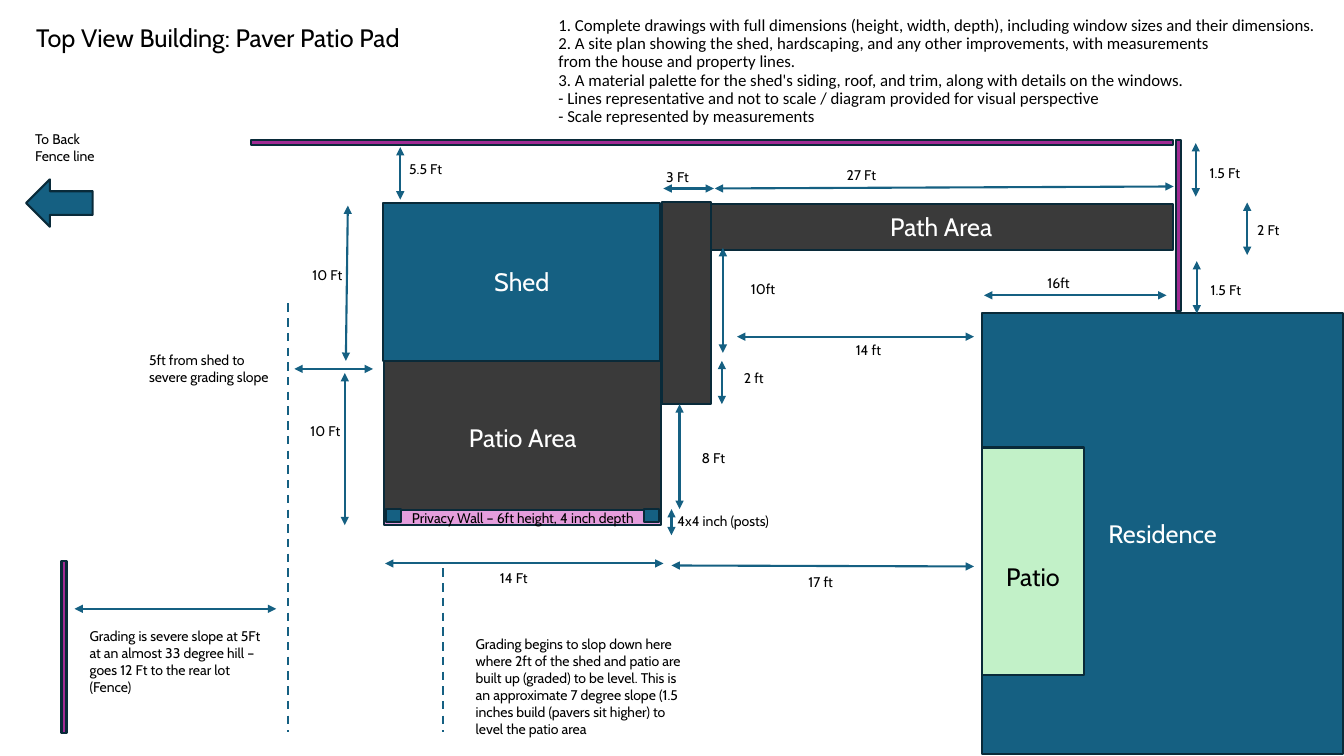
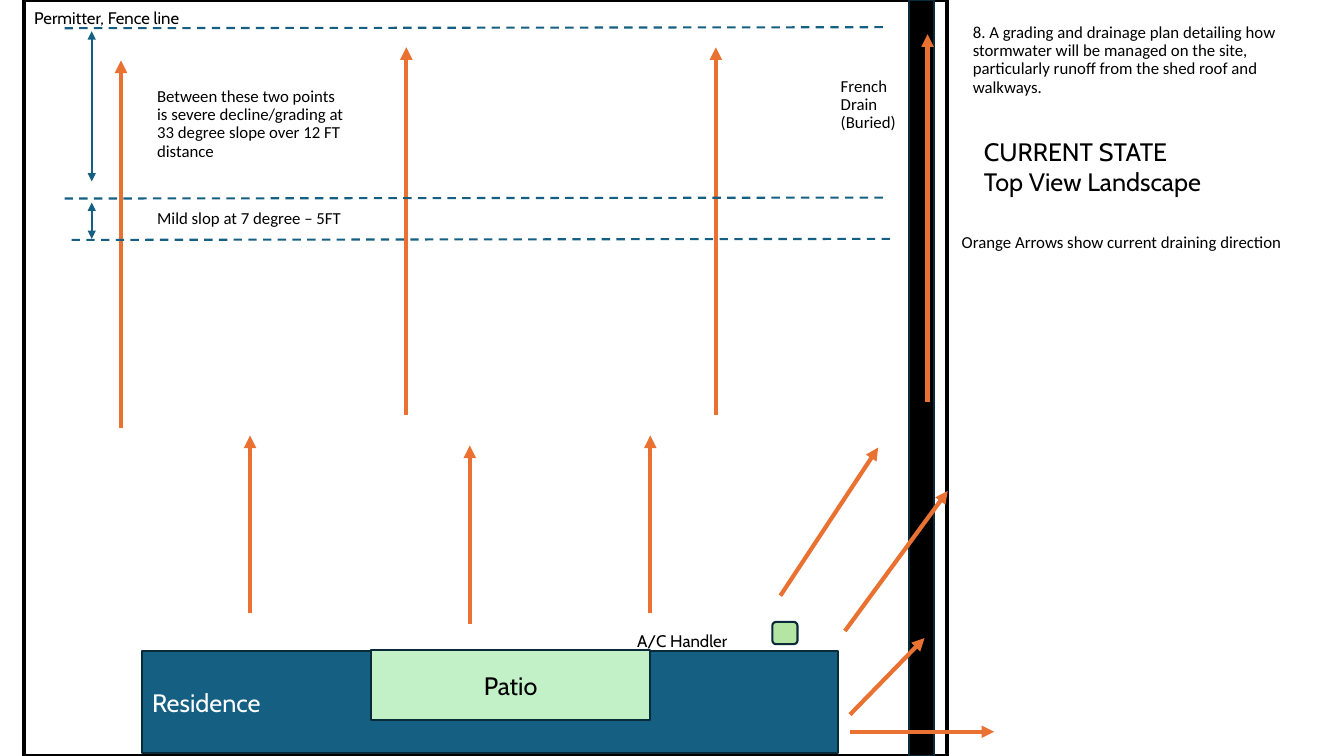
from lxml import etree
from pptx import Presentation
from pptx.dml.color import RGBColor
from pptx.enum.dml import MSO_LINE
from pptx.enum.shapes import MSO_CONNECTOR, MSO_SHAPE
from pptx.enum.text import MSO_ANCHOR, PP_ALIGN
from pptx.oxml.ns import qn
from pptx.util import Inches, Pt

RECT, ROUNDED, LEFT_ARROW = MSO_SHAPE.RECTANGLE, MSO_SHAPE.ROUNDED_RECTANGLE, MSO_SHAPE.LEFT_ARROW
STRAIGHT, DASH = MSO_CONNECTOR.STRAIGHT, MSO_LINE.DASH
TOP, MIDDLE = MSO_ANCHOR.TOP, MSO_ANCHOR.MIDDLE
LEFT, CENTER = PP_ALIGN.LEFT, PP_ALIGN.CENTER

BLUE, EDGE, PAVER, FENCE = "156082", "092A39", "3A3A3A", "A02B93"
MINT, GREEN, PINK, ORANGE = "C2F1C8", "B4E5A2", "E59EDD", "E97132"
BLACK, WHITE = "000000", "FFFFFF"
HEADING, CAPTION, LABEL, NOTE = ("Cabin", 18), ("Cabin", 12), ("Cabin", 10), ("Calibri", 12)

color = RGBColor.from_string


def add_block(slide, box, text="", style=HEADING, ink=BLACK, kind=None,
              fill=None, edge=EDGE, weight=1.5, align=CENTER):
    place = [Inches(length) for length in box]
    if kind is None:
        block = slide.shapes.add_textbox(*place)
        align = LEFT
    else:
        block = slide.shapes.add_shape(kind, *place)
        block.shadow.inherit = False
        if fill:
            block.fill.solid()
            block.fill.fore_color.rgb = color(fill)
        else:
            block.fill.background()
        block.line.color.rgb = color(edge)
        block.line.width = Pt(weight)
    frame = block.text_frame
    frame.word_wrap = True
    frame.vertical_anchor = TOP if kind is None and style != NOTE else MIDDLE
    if text:
        paragraph = frame.paragraphs[0]
        paragraph.alignment = align
        if style == NOTE:
            paragraph.line_spacing = 0.9
        for number, row in enumerate(text.split("\n")):
            if number:
                paragraph.add_line_break()
            run = paragraph.add_run()
            run.text = row
            run.font.name, run.font.size = style[0], Pt(style[1])
            run.font.color.rgb = color(ink)
    return block


def add_line(slide, ends, ink=BLUE, weight=1.5, dash=None, arrows=()):
    line = slide.shapes.add_connector(STRAIGHT, *[Inches(end) for end in ends])
    line.line.color.rgb = color(ink)
    line.line.width = Pt(weight)
    if dash:
        line.line.dash_style = dash
    properties = line.element.spPr
    for arrow in arrows:
        etree.SubElement(properties.find(qn("a:ln")), qn(arrow), type="triangle")
    etree.SubElement(properties, qn("a:effectLst"))


BOTH_ENDS, FAR_END = ("a:headEnd", "a:tailEnd"), ("a:tailEnd",)

prs = Presentation()
prs.slide_width, prs.slide_height = Inches(13.33), Inches(7.5)
blank = prs.slide_layouts[6]

building = prs.slides.add_slide(blank)
add_block(building, (0.26, 0.17, 3.95, 0.4), "Top View Building: Paver Patio Pad")
add_block(building, (0.26, 1.78, 0.66, 0.47), kind=LEFT_ARROW, fill=BLUE)

for box, name, fill in [
    ((3.8, 2.01, 2.75, 1.57), "Shed", BLUE),
    ((9.74, 3.11, 3.58, 4.37), "Residence", BLUE),
    ((3.81, 3.58, 2.75, 1.52), "Patio Area", PAVER),
    ((7.04, 2.02, 4.59, 0.46), "Path Area", PAVER),
    ((6.57, 2, 0.48, 2.01), "", PAVER),
]:
    add_block(building, box, name, ink=WHITE, kind=RECT, fill=fill)

for box in [(2.49, 1.39, 9.14, 0.05), (11.66, 1.39, 0.05, 1.7), (0.61, 5.57, 0.05, 1.7)]:
    add_block(building, box, kind=RECT, fill=FENCE)

add_block(building, (3.81, 5.06, 2.75, 0.15), "Privacy Wall – 6ft height, 4 inch depth",
          LABEL, kind=RECT, fill=PINK)
for post_left in (3.83, 6.39):
    add_block(building, (post_left, 5.05, 0.15, 0.13), kind=RECT, fill=BLUE)

house_patio = add_block(building, (9.74, 4.44, 1.01, 2.26), "Patio", kind=RECT, fill=MINT)
house_patio.text_frame.margin_top = Inches(0.35)

for ends in [
    (3.45, 2.04, 3.43, 3.58), (7.16, 3.58, 7.16, 4.01), (6.74, 4.01, 6.74, 5.05),
    (3.42, 3.7, 3.42, 5.21), (12.37, 2.01, 12.37, 2.53), (3.97, 1.46, 3.97, 1.98),
    (11.86, 1.42, 11.86, 1.95), (11.87, 2.59, 11.87, 3.11), (7.08, 1.87, 6.58, 1.87),
    (11.64, 1.85, 7.09, 1.87), (6.58, 5.59, 3.82, 5.59), (6.66, 5.05, 6.66, 5.31),
    (9.66, 5.62, 6.66, 5.61), (9.66, 3.34, 7.31, 3.34), (7.17, 2.46, 7.17, 3.5),
    (11.57, 2.93, 9.76, 2.93), (3.7, 3.66, 2.92, 3.66), (2.74, 6.04, 0.74, 6.04),
]:
    add_line(building, ends, arrows=BOTH_ENDS)

for left, top in [(4.39, 5.64), (2.86, 3.01)]:
    add_line(building, (left, top, left, 7.26), dash=DASH)

for left, top, distance in [
    (3, 2.59, "10 Ft"), (7.28, 3.62, "2 ft"), (6.86, 4.41, "8 Ft"), (2.98, 4.14, "10 Ft"),
    (12.37, 2.15, "2 Ft"), (3.96, 1.54, "5.5 Ft"), (11.9, 1.58, "1.5 Ft"),
    (11.91, 2.74, "1.5 Ft"), (6.51, 1.62, "3 Ft"), (8.3, 1.6, "27 Ft"),
    (4.86, 5.6, "14 Ft"), (7.92, 5.64, "17 ft"), (8.39, 3.34, "14 ft"),
    (7.35, 2.73, "10ft"), (10.29, 2.67, "16ft"),
]:
    add_block(building, (left, top, 0.87, 0.27), distance, LABEL)

for box, remark in [
    ((0.25, 1.25, 0.88, 0.44), "To Back Fence line"),
    ((6.62, 5.04, 1.22, 0.27), "4x4 inch (posts)"),
    ((1.38, 3.44, 1.54, 0.44), "5ft from shed to severe grading slope"),
    ((4.62, 6.26, 2.34, 1.11),
     "Grading begins to slop down here where 2ft of the shed and patio are built up (graded) "
     "to be level. This is an approximate 7 degree slope (1.5 inches build (pavers sit higher) "
     "to level the patio area"),
    ((0.79, 6.18, 1.89, 0.77),
     "Grading is severe slope at 5Ft at an almost 33 degree hill – goes 12 Ft to the rear lot (Fence)"),
]:
    add_block(building, box, remark, LABEL)

add_block(building, (5.44, 0.01, 7.8, 1.4),
          "1. Complete drawings with full dimensions (height, width, depth), "
          "including window sizes and their dimensions.\n"
          "2. A site plan showing the shed, hardscaping, and any other improvements, with measurements\n"
          "from the house and property lines.\n"
          "3. A material palette for the shed's siding, roof, and trim, along with details on the windows.\n"
          "- Lines representative and not to scale / diagram provided for visual perspective\n"
          "- Scale represented by measurements", NOTE)

landscape = prs.slides.add_slide(blank)
add_block(landscape, (1.41, 6.46, 6.9, 1.01), "Residence", ink=WHITE, kind=RECT, fill=BLUE, align=LEFT)
add_block(landscape, (0.24, 0, 9.15, 7.5), kind=RECT, edge=BLACK, weight=3)
add_block(landscape, (0.24, 0.03, 2.54, 0.3), "Permitter, Fence line", CAPTION)
add_block(landscape, (7.66, 6.17, 0.25, 0.22), kind=ROUNDED, fill=GREEN)
add_block(landscape, (6.22, 6.21, 1.4, 0.3), "A/C Handler", CAPTION)
add_block(landscape, (3.68, 6.45, 2.77, 0.69), "Patio", kind=RECT, fill=MINT)
add_block(landscape, (9.02, 0, 0.24, 7.5), kind=RECT, fill=BLACK)
add_block(landscape, (9.66, 1.3, 2.81, 0.71), "CURRENT STATE\nTop View Landscape")

for ends in [
    (1.2, 4.25, 1.2, 0.6), (4.03, 4.12, 4.03, 0.47), (7.1, 4.12, 7.1, 0.47),
    (9.2, 3.99, 9.2, 0.34), (7.74, 5.91, 8.71, 4.44), (8.43, 7.26, 9.86, 7.26),
    (8.38, 6.26, 9.4, 4.87), (8.43, 7.09, 9.17, 6.33), (4.66, 6.19, 4.66, 4.42),
    (6.45, 6.08, 6.45, 4.32), (2.48, 6.08, 2.48, 4.32),
]:
    add_line(landscape, ends, ORANGE, 3, arrows=FAR_END)

for left, top in [(0.64, 0.28), (0.64, 1.97), (0.71, 2.38)]:
    add_line(landscape, (left, top, left + 8.15, top - 0.01), dash=DASH)
for top, bottom in [(0.31, 1.8), (2.01, 2.37)]:
    add_line(landscape, (0.91, top, 0.91, bottom), arrows=BOTH_ENDS)

for box, remark in [
    ((9.55, 0.05, 3.61, 1.1),
     "8. A grading and drainage plan detailing how stormwater will be managed on the site, "
     "particularly runoff from the shed roof and walkways."),
    ((8.24, 0.69, 0.99, 0.7), "French Drain (Buried)"),
    ((9.44, 2.23, 3.41, 0.37), "Orange Arrows show current draining direction"),
    ((1.46, 2.04, 2.46, 0.26), "Mild slop at 7 degree – 5FT"),
    ((1.46, 0.87, 2.07, 0.73),
     "Between these two points is severe decline/grading at 33 degree slope over 12 FT distance"),
]:
    add_block(landscape, box, remark, NOTE)

prs.save("out.pptx")
